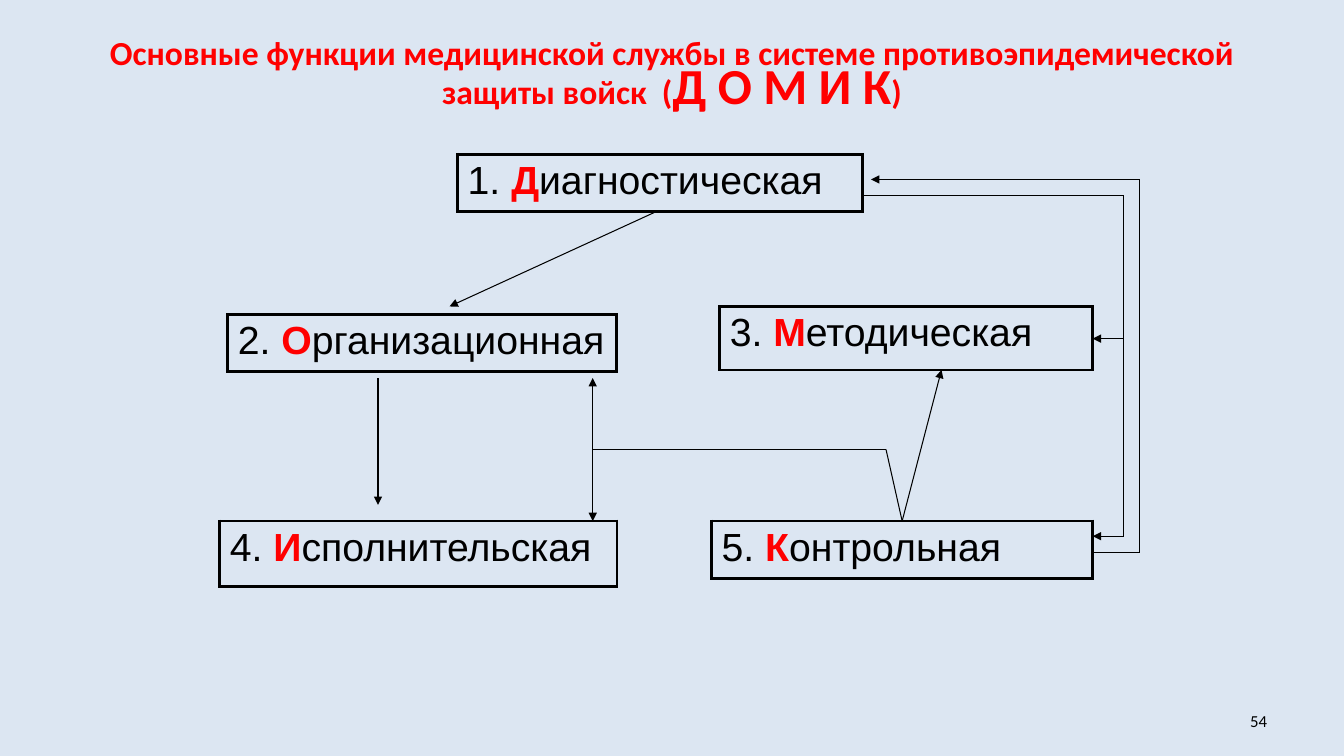
from itertools import pairwise

from lxml.etree import SubElement
from pptx import Presentation
from pptx.dml.color import RGBColor
from pptx.enum.shapes import MSO_CONNECTOR as Connector
from pptx.enum.text import MSO_ANCHOR as Anchor, PP_ALIGN as Align
from pptx.oxml.ns import qn
from pptx.util import Pt

# Content
BACKGROUND, BLACK, RED = "DCE6F2", "000000", "FF0000"
TITLE = [
    ("Основные функции медицинской службы в системе противоэпидемической защиты войск  (", 24),
    ("Д О М И К", 36),
    (")", 24),
]
PAGE_NUMBER = "54"

# Number, highlighted letter, rest of the word, (left, top, width, height)
FUNCTIONS = [
    ("2. ", "О", "рганизационная", (162.7, 224.6, 277.9, 41)),
    ("1. ", "Д", "иагностическая", (326.9, 110.2, 289.4, 40)),
    ("3. ", "М", "етодическая", (514.1, 218.9, 266.4, 45.4)),
    ("5. ", "К", "онтрольная", (508.3, 372.2, 272.2, 41)),
    ("4. ", "И", "сполнительская", (157, 372.2, 283.7, 46.8)),
]

# Points along each route, arrow at its start; every route has an arrow at its end
ROUTES = [
    ([(468.7, 151.2), (321.1, 218.9)], False),
    ([(270, 270), (270, 360.7)], False),
    ([(423.4, 372.2), (423.4, 270)], True),
    ([(423.4, 321.1), (632.9, 321.1), (644.4, 372.2), (672.5, 264.2)], False),
    ([(780.5, 394.6), (814.3, 394.6), (814.3, 128.2), (622.1, 128.2)], False),
    ([(616.3, 139.7), (802.8, 139.7), (802.8, 383), (780.5, 383)], False),
    ([(802.8, 241.9), (780.5, 241.9)], False),
]


def color(value):
    return RGBColor.from_string(value)


def add_text(paragraph, text, size=28, font="Arial", fill=BLACK, bold=False):
    run = paragraph.add_run()
    run.text = text
    run.font.size = Pt(size)
    run.font.name = font
    run.font.bold = bold
    run.font.color.rgb = color(fill)


def add_box(slide, bounds, align, anchor, top_margin=3.6):
    frame = slide.shapes.add_textbox(*map(Pt, bounds)).text_frame
    frame.word_wrap = True
    frame.vertical_anchor = anchor
    frame.margin_top = Pt(top_margin)
    paragraph = frame.paragraphs[0]
    paragraph.alignment = align
    return paragraph


def add_function(slide, number, letter, rest, bounds):
    table = slide.shapes.add_table(1, 1, *map(Pt, bounds)).table
    table.first_row = table.horz_banding = False
    cell = table.cell(0, 0)
    properties = cell._tc.get_or_add_tcPr()
    for side in ("a:lnL", "a:lnR", "a:lnT", "a:lnB"):
        border = SubElement(properties, qn(side), w=str(Pt(2.25)))
        SubElement(SubElement(border, qn("a:solidFill")), qn("a:srgbClr"), val=BLACK)
    cell.fill.solid()
    cell.fill.fore_color.rgb = color(BACKGROUND)
    paragraph = cell.text_frame.paragraphs[0]
    add_text(paragraph, number)
    add_text(paragraph, letter, fill=RED, bold=True)
    add_text(paragraph, rest)


def add_line(slide, start, end, head=False, tail=False):
    line = slide.shapes.add_connector(Connector.STRAIGHT, *map(Pt, start + end))
    line.line.color.rgb = color(BLACK)
    line.line.width = Pt(0.75)
    for tag, wanted in (("a:headEnd", head), ("a:tailEnd", tail)):
        if wanted:
            SubElement(line.line._get_or_add_ln(), qn(tag), type="triangle")
    SubElement(line._element.spPr, qn("a:effectLst"))


def main():
    presentation = Presentation()
    presentation.slide_width, presentation.slide_height = Pt(960), Pt(540)
    slide = presentation.slides.add_slide(presentation.slide_layouts[6])
    slide.background.fill.solid()
    slide.background.fill.fore_color.rgb = color(BACKGROUND)

    # Title
    title = add_box(slide, (48, 21.6, 864, 90), Align.CENTER, Anchor.TOP, top_margin=9)
    title.line_spacing = 0.7
    for text, size in TITLE:
        add_text(title, text, size=size, font="Calibri", fill=RED, bold=True)

    # Framed functions
    for function in FUNCTIONS:
        add_function(slide, *function)

    # Routes between the functions
    for points, arrow_at_start in ROUTES:
        segments = list(pairwise(points))
        for index, (start, end) in enumerate(segments):
            add_line(slide, start, end, head=arrow_at_start and index == 0,
                     tail=index == len(segments) - 1)

    # Page number
    number = add_box(slide, (688.3, 500.4, 223.9, 28.8), Align.RIGHT, Anchor.MIDDLE)
    add_text(number, PAGE_NUMBER, size=12, font="Calibri")

    presentation.save("out.pptx")


if __name__ == "__main__":
    main()
